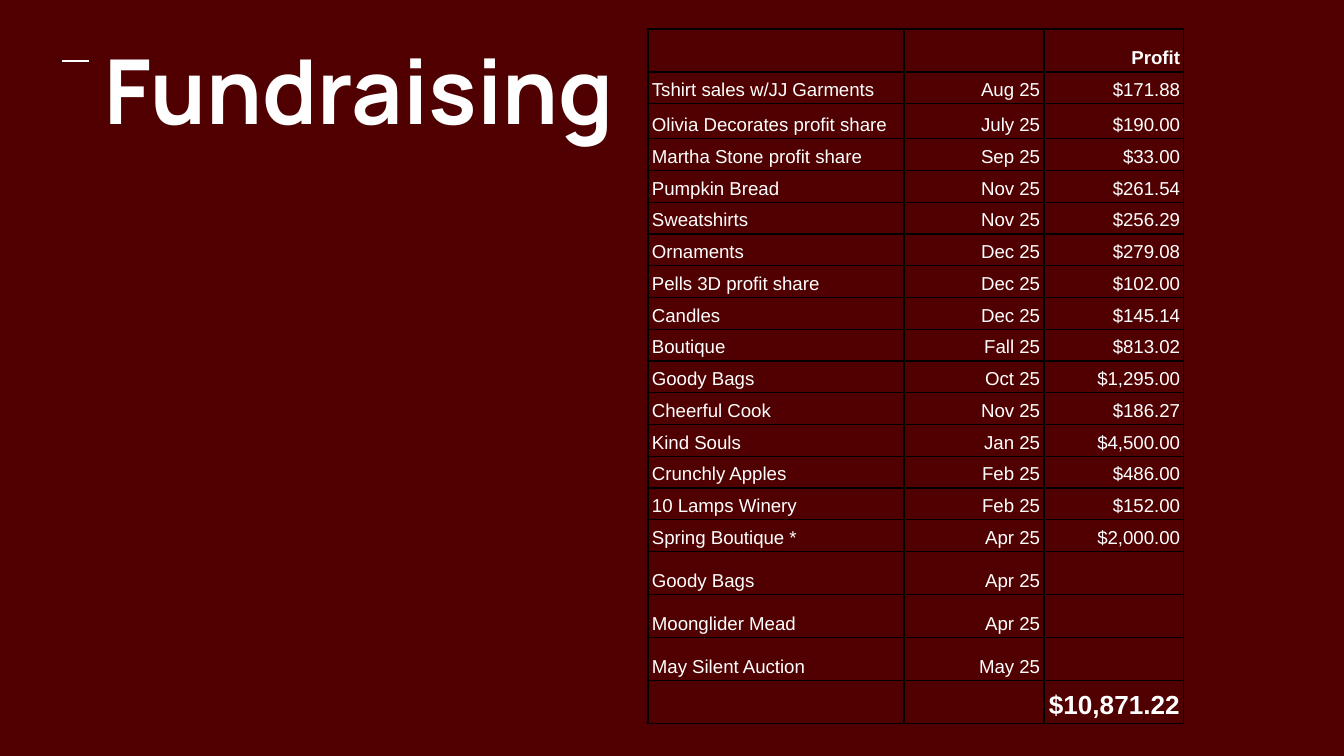
"""Build the fundraising slide: a title beside a table of profits."""
from dataclasses import dataclass

import lxml.etree
import pptx
import pptx.dml.color
import pptx.enum.shapes
import pptx.enum.text
import pptx.oxml.ns
import pptx.util

EMU_PER_PX = 914400 / 134.4
COLORS = {"maroon": "500000", "white": "FFFFFF", "black": "000000"}
COLUMN_WIDTHS = (256, 140, 140)
TALL, NORMAL = 43, 31
LEFT = pptx.enum.text.PP_ALIGN.LEFT
RIGHT = pptx.enum.text.PP_ALIGN.RIGHT


@dataclass(frozen=True)
class Entry:
    """One row of the profit table."""
    source: str = ""
    month: str = ""
    profit: str = ""
    height: int = NORMAL
    size: int = 10
    bold: bool = False


ENTRIES = [
    Entry(profit="Profit", height=TALL, bold=True),
    Entry("Tshirt sales w/JJ Garments", "Aug 25", "$171.88"),
    Entry("Olivia Decorates profit share", "July 25", "$190.00", height=35),
    Entry("Martha Stone profit share", "Sep 25", "$33.00"),
    Entry("Pumpkin Bread", "Nov 25", "$261.54"),
    Entry("Sweatshirts", "Nov 25", "$256.29"),
    Entry("Ornaments", "Dec 25", "$279.08"),
    Entry("Pells 3D profit share", "Dec 25", "$102.00"),
    Entry("Candles", "Dec 25", "$145.14"),
    Entry("Boutique", "Fall 25", "$813.02"),
    Entry("Goody Bags", "Oct 25", "$1,295.00"),
    Entry("Cheerful Cook", "Nov 25", "$186.27"),
    Entry("Kind Souls", "Jan 25", "$4,500.00"),
    Entry("Crunchly Apples", "Feb 25", "$486.00"),
    Entry("10 Lamps Winery", "Feb 25", "$152.00"),
    Entry("Spring Boutique *", "Apr 25", "$2,000.00"),
    Entry("Goody Bags", "Apr 25", height=TALL),
    Entry("Moonglider Mead", "Apr 25", height=TALL),
    Entry("May Silent Auction", "May 25", height=TALL),
    Entry(profit="$10,871.22", height=TALL, size=14, bold=True),
]


def px(length: int) -> pptx.util.Emu:
    """Turn pixels into EMU."""
    return pptx.util.Emu(round(length * EMU_PER_PX))


def color(name: str) -> pptx.dml.color.RGBColor:
    """Look up a named colour."""
    return pptx.dml.color.RGBColor.from_string(COLORS[name])


def style_runs(paragraph, face: str, size: int, bold: bool) -> None:
    """Format every run of a paragraph in white."""
    for run in paragraph.runs:
        run.font.name = face
        run.font.size = pptx.util.Pt(size)
        run.font.bold = bold
        run.font.color.rgb = color("white")


def add_borders(cell) -> None:
    """Give a cell thin black borders on all four sides."""
    qn = pptx.oxml.ns.qn
    properties = cell._tc.get_or_add_tcPr()
    for side in ("a:lnL", "a:lnR", "a:lnT", "a:lnB"):
        border = lxml.etree.SubElement(properties, qn(side), w=str(pptx.util.Pt(0.75)))
        fill = lxml.etree.SubElement(border, qn("a:solidFill"))
        lxml.etree.SubElement(fill, qn("a:srgbClr"), val=COLORS["black"])


def fill_cell(cell, text: str, align: pptx.enum.text.PP_ALIGN, entry: Entry) -> None:
    """Write and format one table cell."""
    add_borders(cell)
    cell.fill.background()
    cell.margin_left = cell.margin_right = px(4)
    cell.margin_top = cell.margin_bottom = px(3)
    cell.vertical_anchor = pptx.enum.text.MSO_ANCHOR.BOTTOM
    paragraph = cell.text_frame.paragraphs[0]
    paragraph.alignment = align
    paragraph.line_spacing = 1.15
    if text:
        paragraph.text = text
        style_runs(paragraph, "Arial", entry.size, entry.bold)
    else:
        ending = lxml.etree.SubElement(paragraph._p, pptx.oxml.ns.qn("a:endParaRPr"))
        ending.set("sz", str(entry.size * 100))


def add_profits(slide, left: int, top: int) -> None:
    """Draw the table of profits."""
    height = sum(entry.height for entry in ENTRIES)
    profits = slide.shapes.add_table(
        len(ENTRIES), len(COLUMN_WIDTHS), px(left), px(top),
        px(sum(COLUMN_WIDTHS)), px(height)).table
    profits.first_row = profits.horz_banding = False
    for column, width in zip(profits.columns, COLUMN_WIDTHS):
        column.width = px(width)
    for row, entry in zip(profits.rows, ENTRIES):
        row.height = px(entry.height)
        texts = (entry.source, entry.month, entry.profit)
        for cell, text, align in zip(row.cells, texts, (LEFT, RIGHT, RIGHT)):
            fill_cell(cell, text, align, entry)


def add_dash(slide, left: int, right: int, y: int) -> None:
    """Draw the short white line before the title."""
    dash = slide.shapes.add_connector(
        pptx.enum.shapes.MSO_CONNECTOR.STRAIGHT, px(left), px(y), px(right), px(y))
    dash.line.color.rgb = color("white")
    dash.line.width = pptx.util.Pt(1.5)
    lxml.etree.SubElement(dash._element.spPr, pptx.oxml.ns.qn("a:effectLst"))


def add_title(slide, left: int, top: int, width: int, height: int) -> None:
    """Write the slide title."""
    title = slide.shapes.add_textbox(px(left), px(top), px(width), px(height)).text_frame
    title.word_wrap = True
    title.margin_left = title.margin_right = px(13)
    title.margin_top = title.margin_bottom = px(13)
    title.text = "Fundraising"
    title.paragraphs[0].line_spacing = 0.95
    style_runs(title.paragraphs[0], "Manrope", 48, True)


def main() -> None:
    """Build and save the presentation."""
    deck = pptx.Presentation()
    deck.slide_width, deck.slide_height = px(1344), px(756)
    slide = deck.slides.add_slide(deck.slide_layouts[6])
    slide.background.fill.solid()
    slide.background.fill.fore_color.rgb = color("maroon")
    add_dash(slide, 62, 89, 61)
    add_title(slide, 91, 30, 1269, 160)
    add_profits(slide, 648, 29)
    deck.save("out.pptx")


if __name__ == "__main__":
    main()
